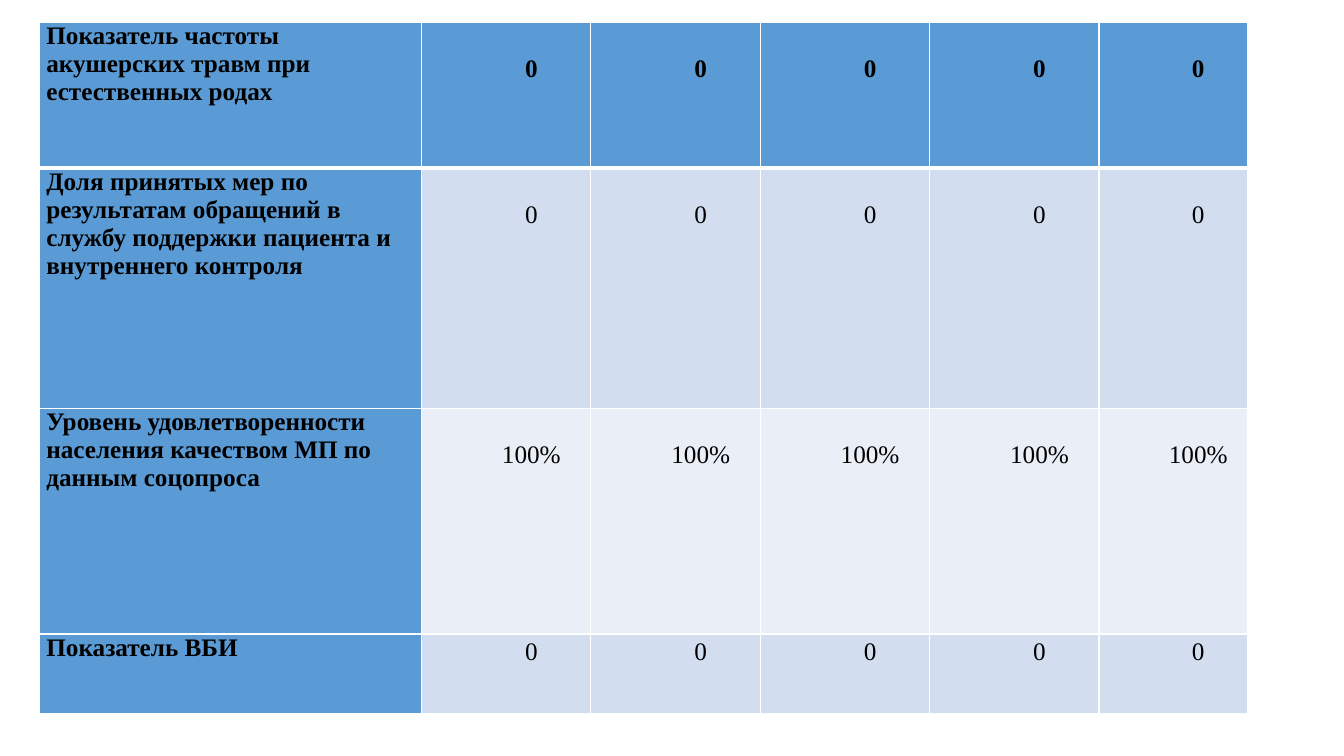
from dataclasses import dataclass

from lxml.etree import SubElement
from pptx import Presentation
from pptx.dml.color import RGBColor
from pptx.enum.text import PP_ALIGN
from pptx.oxml.ns import qn
from pptx.util import Inches, Pt


@dataclass(frozen=True)
class Theme:
    font: str = "Times New Roman"
    text_size: int = 18
    text: str = "000000"
    accent: str = "5B9BD5"
    bands: tuple = ("D2DEEF", "EAEFF7")
    border: str = "FFFFFF"
    thin: int = 1
    thick: int = 3


COLUMN_WIDTHS = [3.79] + [1.68] * 4 + [1.47]
PERIODS = len(COLUMN_WIDTHS) - 1
VALUE_DROP = 0.28

# label, value of every period, row height, top margin of the values
INDICATORS = [
    ("Показатель частоты акушерских травм при естественных родах", "0", 1.45, VALUE_DROP),
    ("Доля принятых мер по результатам обращений в службу поддержки пациента "
     "и внутреннего контроля", "0", 2.38, VALUE_DROP),
    ("Уровень удовлетворенности населения качеством МП по данным соцопроса",
     "100%", 2.24, VALUE_DROP),
    ("Показатель ВБИ", "0", 0.79, 0),
]


class SlideBuilder:
    def __init__(self, slide, theme):
        self.slide = slide
        self.theme = theme

    def add_indicator_table(self, left, top, indicators):
        width = sum(COLUMN_WIDTHS)
        height = sum(row_height for _, _, row_height, _ in indicators)
        table = self.slide.shapes.add_table(
            len(indicators), len(COLUMN_WIDTHS),
            Inches(left), Inches(top), Inches(width), Inches(height)).table
        for column, column_width in zip(table.columns, COLUMN_WIDTHS):
            column.width = Inches(column_width)
        for index, (label, value, row_height, value_top) in enumerate(indicators):
            row = table.rows[index]
            row.height = Inches(row_height)
            is_header = index == 0
            band = self.theme.accent if is_header else self.theme.bands[(index - 1) % 2]
            label_cell, *value_cells = row.cells
            for cell in row.cells:
                self.add_borders(cell, thick_top=index == 1, thick_bottom=is_header)
            self.fill_cell(label_cell, label, self.theme.accent, bold=True)
            for cell in value_cells:
                self.fill_cell(cell, value, band, bold=is_header, top=value_top)
                self.center_value(cell.text_frame.paragraphs[0])

    def fill_cell(self, cell, text, color, bold, top=0):
        cell.fill.solid()
        cell.fill.fore_color.rgb = RGBColor.from_string(color)
        cell.margin_left = cell.margin_right = Inches(0.07)
        cell.margin_top = Inches(top)
        cell.margin_bottom = 0
        cell.text = text
        font = cell.text_frame.paragraphs[0].font
        font.name = self.theme.font
        font.size = Pt(self.theme.text_size)
        font.bold = bold
        font.color.rgb = RGBColor.from_string(self.theme.text)

    def center_value(self, paragraph):
        """Centre a value within the part of its cell right of the indent."""
        paragraph.alignment = PP_ALIGN.CENTER
        paragraph.line_spacing = 1.15
        paragraph._p.get_or_add_pPr().set("marL", str(Inches(0.5)))

    def add_borders(self, cell, thick_top, thick_bottom):
        """Draw the four cell lines; call before the cell is filled."""
        properties = cell._tc.get_or_add_tcPr()
        sides = {"a:lnL": False, "a:lnR": False, "a:lnT": thick_top, "a:lnB": thick_bottom}
        for tag, is_thick in sides.items():
            line_width = self.theme.thick if is_thick else self.theme.thin
            line = SubElement(properties, qn(tag), w=str(Pt(line_width)))
            fill = SubElement(line, qn("a:solidFill"))
            SubElement(fill, qn("a:srgbClr"), val=self.theme.border)


def main():
    presentation = Presentation()
    presentation.slide_width = Inches(13.33)
    presentation.slide_height = Inches(7.5)
    blank_layout = presentation.slide_layouts[6]
    builder = SlideBuilder(presentation.slides.add_slide(blank_layout), Theme())
    builder.add_indicator_table(0.39, 0.22, INDICATORS)
    presentation.save("out.pptx")


if __name__ == "__main__":
    main()
